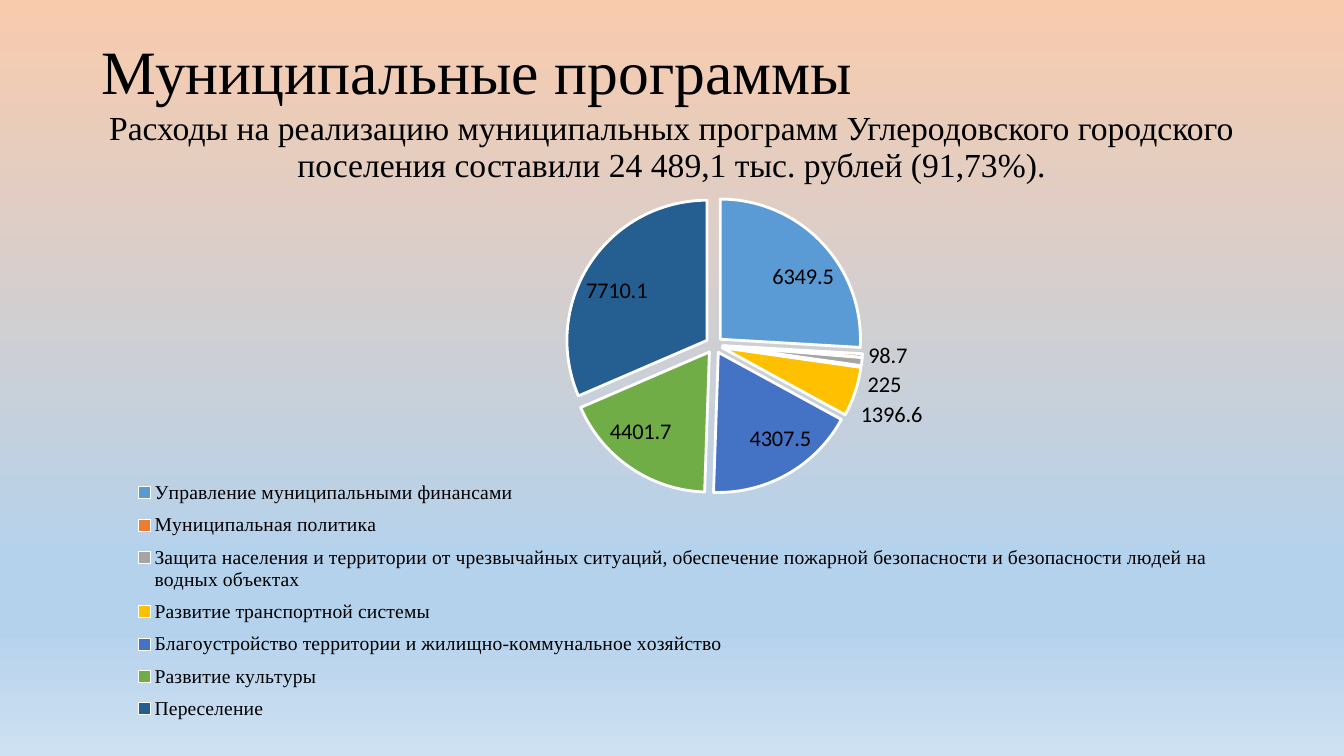
from dataclasses import dataclass

from lxml import etree
from pptx import Presentation
from pptx.chart.data import CategoryChartData
from pptx.dml.color import RGBColor
from pptx.enum.chart import XL_CHART_TYPE as ChartType
from pptx.enum.chart import XL_LABEL_POSITION as LabelPosition
from pptx.enum.chart import XL_LEGEND_POSITION as LegendPosition
from pptx.enum.text import MSO_ANCHOR as Anchor
from pptx.enum.text import PP_ALIGN as Align
from pptx.oxml.ns import qn
from pptx.util import Pt

EMU_PER_PX = 9144

TITLE = "Муниципальные программы"
SUMMARY = (
    "Расходы на реализацию муниципальных программ Углеродовского городского "
    "поселения составили 24 489,1 тыс. рублей (91,73%)."
)
PROGRAMS = {
    "Управление муниципальными финансами": 6349.5,
    "Муниципальная политика": 98.7,
    "Защита населения и территории от чрезвычайных ситуаций, обеспечение "
    "пожарной безопасности и безопасности людей на водных объектах": 225,
    "Развитие транспортной системы": 1396.6,
    "Благоустройство территории и жилищно-коммунальное хозяйство": 4307.5,
    "Развитие культуры": 4401.7,
    "Переселение": 7710.1,
}


@dataclass(frozen=True)
class Theme:
    text: str = "000000"
    outline: str = "FFFFFF"
    backdrop: tuple = ((0, "F8CBAD"), (74, "B5D2EC"), (83, "B5D2EC"), (100, "CEE1F2"))
    slices: tuple = ("5B9BD5", "ED7D31", "A5A5A5", "FFC000", "4472C4", "70AD47", "255E91")
    text_font: str = "Times New Roman"
    chart_font: str = "Calibri"
    title_size: int = 44
    summary_size: int = 24
    label_size: int = 16
    legend_size: int = 14
    chart_size: int = 10


def px(*lengths):
    return [length * EMU_PER_PX for length in lengths]


def apply(target, values):
    for name, value in values.items():
        setattr(target, name, value)


def set_layout(parent, position, box, inner=False):
    for old in parent.findall(qn("c:layout")):
        parent.remove(old)
    layout = etree.Element(qn("c:layout"))
    manual = etree.SubElement(layout, qn("c:manualLayout"))
    values = {"layoutTarget": "inner"} if inner else {}
    values |= {"xMode": "edge", "yMode": "edge"}
    values |= dict(zip("xywh", map(str, box)))
    for name, value in values.items():
        etree.SubElement(manual, qn(f"c:{name}"), val=value)
    parent.insert(position, layout)


class SlideBuilder:
    def __init__(self, presentation, theme):
        self.theme = theme
        self.slide = presentation.slides.add_slide(presentation.slide_layouts[5])

    def style_font(self, font, name, size):
        apply(font, {"name": name, "size": Pt(size), "bold": False})
        font.color.rgb = RGBColor.from_string(self.theme.text)

    def background(self):
        fill = self.slide.background.fill
        fill.gradient()
        fill.gradient_angle = 270
        stops = next(self.slide.element.iter(qn("a:gsLst")))
        for stop in list(stops):
            stops.remove(stop)
        for percent, color in self.theme.backdrop:
            stop = etree.SubElement(stops, qn("a:gs"), pos=str(percent * 1000))
            etree.SubElement(stop, qn("a:srgbClr"), val=color)

    def set_text(self, shape, text, size, anchor, paragraph_format):
        apply(shape.text_frame, {"text": text, "word_wrap": True, "vertical_anchor": anchor})
        paragraph = shape.text_frame.paragraphs[0]
        apply(paragraph, {"line_spacing": 0.9} | paragraph_format)
        self.style_font(paragraph.runs[0].font, self.theme.text_font, size)

    def title(self, text, box):
        shape = self.slide.shapes.title
        apply(shape, dict(zip(("left", "top", "width", "height"), px(*box))))
        self.set_text(shape, text, self.theme.title_size, Anchor.BOTTOM, {"alignment": Align.LEFT})

    def summary(self, text, box):
        shape = self.slide.shapes.add_textbox(*px(*box))
        paragraph_format = {"alignment": Align.CENTER, "space_before": Pt(10)}
        self.set_text(shape, text, self.theme.summary_size, Anchor.TOP, paragraph_format)

    def pie(self, values, box, plot_box, legend_box):
        data = CategoryChartData()
        data.categories = list(values)
        data.add_series("Series 1", list(values.values()))
        chart = self.slide.shapes.add_chart(ChartType.PIE, *px(*box), data).chart
        apply(chart, {"has_title": False, "has_legend": True})
        self.style_font(chart.font, self.theme.chart_font, self.theme.chart_size)
        self.style_slices(chart.plots[0].series[0])
        self.style_labels(chart.plots[0])
        legend = chart.legend
        apply(legend, {"position": LegendPosition.BOTTOM, "include_in_layout": False})
        self.style_font(legend.font, self.theme.text_font, self.theme.legend_size)
        set_layout(legend._element, 1, legend_box)
        plot_area = chart._chartSpace.chart.plotArea
        set_layout(plot_area, 0, plot_box, inner=True)

    def style_slices(self, series):
        for index, color in enumerate(self.theme.slices):
            slice_format = series.points[index].format
            slice_format.fill.solid()
            slice_format.fill.fore_color.rgb = RGBColor.from_string(color)
            slice_format.line.color.rgb = RGBColor.from_string(self.theme.outline)
            slice_format.line.width = Pt(2)
        explosion = etree.Element(qn("c:explosion"), val="6")
        series._element.find(qn("c:dPt")).addprevious(explosion)

    def style_labels(self, plot):
        plot.vary_by_categories = True
        plot.has_data_labels = True
        labels = plot.data_labels
        apply(labels, {"show_value": True, "position": LabelPosition.BEST_FIT})
        self.style_font(labels.font, self.theme.chart_font, self.theme.label_size)


def main():
    presentation = Presentation()
    apply(presentation, dict(zip(("slide_width", "slide_height"), px(1333, 750))))
    builder = SlideBuilder(presentation, Theme())
    builder.background()
    builder.title(TITLE, (91, 19, 1150, 93))
    builder.summary(SUMMARY, (91, 106, 1150, 100))
    builder.pie(
        PROGRAMS,
        box=(56, 184, 1165, 546),
        plot_box=(0.13, 0.02, 0.86, 0.54),
        legend_box=(0.06, 0.52, 0.93, 0.47),
    )
    presentation.save("out.pptx")


if __name__ == "__main__":
    main()
